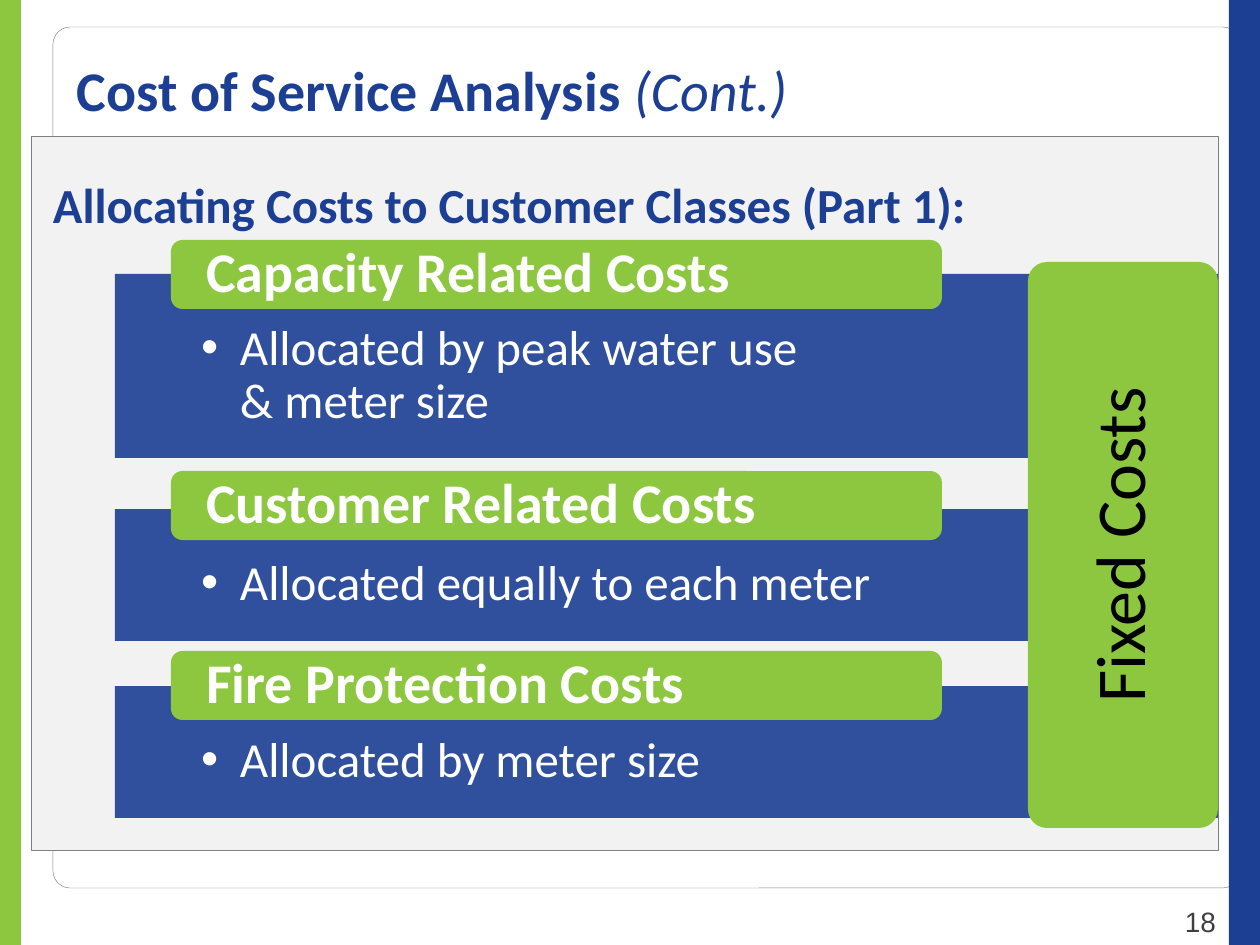
import pptx
import pptx.util
import pptx.dml.color
import pptx.enum.shapes
import pptx.enum.text
import pptx.oxml
import pptx.oxml.ns

KIND = pptx.enum.shapes.MSO_SHAPE
ALIGN = pptx.enum.text.PP_ALIGN
ANCHOR = pptx.enum.text.MSO_ANCHOR
GREEN, BLUE, WHITE, GREY = "8DC73F", "1C3F94", "FFFFFF", "808080"


def px(size):
    return pptx.util.Emu(round(size * 914400 / 126))


def color(code):
    return pptx.dml.color.RGBColor.from_string(code)


def node(tag, **attrs):
    item = pptx.oxml.parse_xml(f"<a:{tag} {pptx.oxml.ns.nsdecls('a')}/>")
    for name, value in attrs.items():
        item.set(name, str(value))
    return item


def apply(target, values):
    for name, value in values.items():
        setattr(target, name, value)


class Deck:
    face = "Calibri"

    def __init__(self):
        self.file = pptx.Presentation()
        apply(self.file, {"slide_width": px(1260), "slide_height": px(945)})
        self.slide = self.file.slides.add_slide(self.file.slide_layouts[5])

    def shape(self, kind, box, fill=None, line=None, curve=None, alpha=None):
        item = self.slide.shapes.add_shape(kind, *map(px, box))
        item.shadow.inherit = False
        if curve is not None:
            item.adjustments[0] = curve
        if fill:
            item.fill.solid()
            item.fill.fore_color.rgb = color(fill)
        else:
            item.fill.background()
        if alpha:
            tint = item._element.spPr.find(".//" + pptx.oxml.ns.qn("a:srgbClr"))
            tint.append(node("alpha", val=alpha * 1000))
        if line:
            item.line.color.rgb = color(line)
            item.line.width = pptx.util.Pt(0.25)
        else:
            item.line.fill.background()
        return item

    def style(self, run, size, code, **font):
        apply(run.font, {"name": self.face, "size": pptx.util.Pt(size), **font})
        run.font.color.rgb = color(code)

    def text(self, item, words, size, code, pads=(13, 6, 13, 6), anchor=ANCHOR.TOP,
             bullet=False, para=None, **font):
        frame = item.text_frame
        sides = ("margin_left", "margin_top", "margin_right", "margin_bottom")
        apply(frame, dict(zip(sides, map(px, pads))))
        apply(frame, {"word_wrap": True, "vertical_anchor": anchor,
                      "auto_size": pptx.enum.text.MSO_AUTO_SIZE.NONE})
        line = frame.paragraphs[0]
        line.text = words
        if bullet:
            props = line._p.get_or_add_pPr()
            props.set("marL", str(px(39)))
            props.set("indent", str(px(-39)))
            props.append(node("buFont", typeface="Arial"))
            props.append(node("buChar", char="•"))
        apply(line, {"alignment": ALIGN.LEFT, **(para or {})})
        for run in line.runs:
            self.style(run, size, code, **font)
        return line

    def label(self, box, words, size, code, **font):
        item = self.slide.shapes.add_textbox(*map(px, box))
        self.text(item, words, size, code, **font)

    def title(self, box, words, tail):
        item = self.slide.shapes.title
        apply(item, dict(zip(("left", "top", "width", "height"), map(px, box))))
        line = self.text(item, words, 32, BLUE, bold=True)
        run = line.add_run()
        run.text = tail
        self.style(run, 32, BLUE, bold=False, italic=True)

    def cost(self, top, base, height, head, note):
        body = self.shape(KIND.RECTANGLE, (115, base, 1103, height), BLUE, alpha=90)
        self.text(body, note, 28, WHITE, pads=(86, 49, 86, 28), bullet=True,
                  para={"line_spacing": 0.9})
        tab = self.shape(KIND.ROUNDED_RECTANGLE, (171, top, 771, 69), GREEN)
        self.text(tab, head, 32, WHITE, pads=(32, 0, 32, 0), anchor=ANCHOR.MIDDLE,
                  para={"line_spacing": 0.9}, bold=True)


def main():
    deck = Deck()
    deck.title((64, 49, 1162, 94), "Cost of Service Analysis ", "(Cont.)")
    deck.shape(KIND.ROUNDED_RECTANGLE, (53, 27, 1187, 861), line=GREY, curve=0.02)
    deck.shape(KIND.ROUNDED_RECTANGLE, (31, 136, 1187, 714), "F2F2F2", GREY, 0)
    deck.shape(KIND.RECTANGLE, (0, 0, 21, 945), GREEN)
    deck.shape(KIND.RECTANGLE, (1229, 0, 31, 945), BLUE)
    deck.label((1166, 899, 63, 46), "18", 16, "404040", name="Arial",
               para={"alignment": ALIGN.RIGHT})
    deck.label((40, 168, 1155, 72), "Allocating Costs to Customer Classes (Part 1):",
               28, BLUE, bold=True)
    costs = (
        (240, 274, 184, "Capacity Related Costs", "Allocated by peak water use \n& meter size"),
        (471, 509, 132, "Customer Related Costs", "Allocated equally to each meter"),
        (651, 686, 132, "Fire Protection Costs", "Allocated by meter size"),
    )
    for row in costs:
        deck.cost(*row)
    side = deck.shape(KIND.ROUNDED_RECTANGLE, (1028, 262, 190, 566), GREEN, curve=0.1)
    deck.text(side, "Fixed Costs", 40, "000000", pads=(29, 29, 29, 29),
              anchor=ANCHOR.MIDDLE,
              para={"alignment": ALIGN.CENTER, "line_spacing": 0.9})
    side.text_frame._txBody.bodyPr.set("vert", "vert270")
    deck.file.save("out.pptx")


if __name__ == "__main__":
    main()
